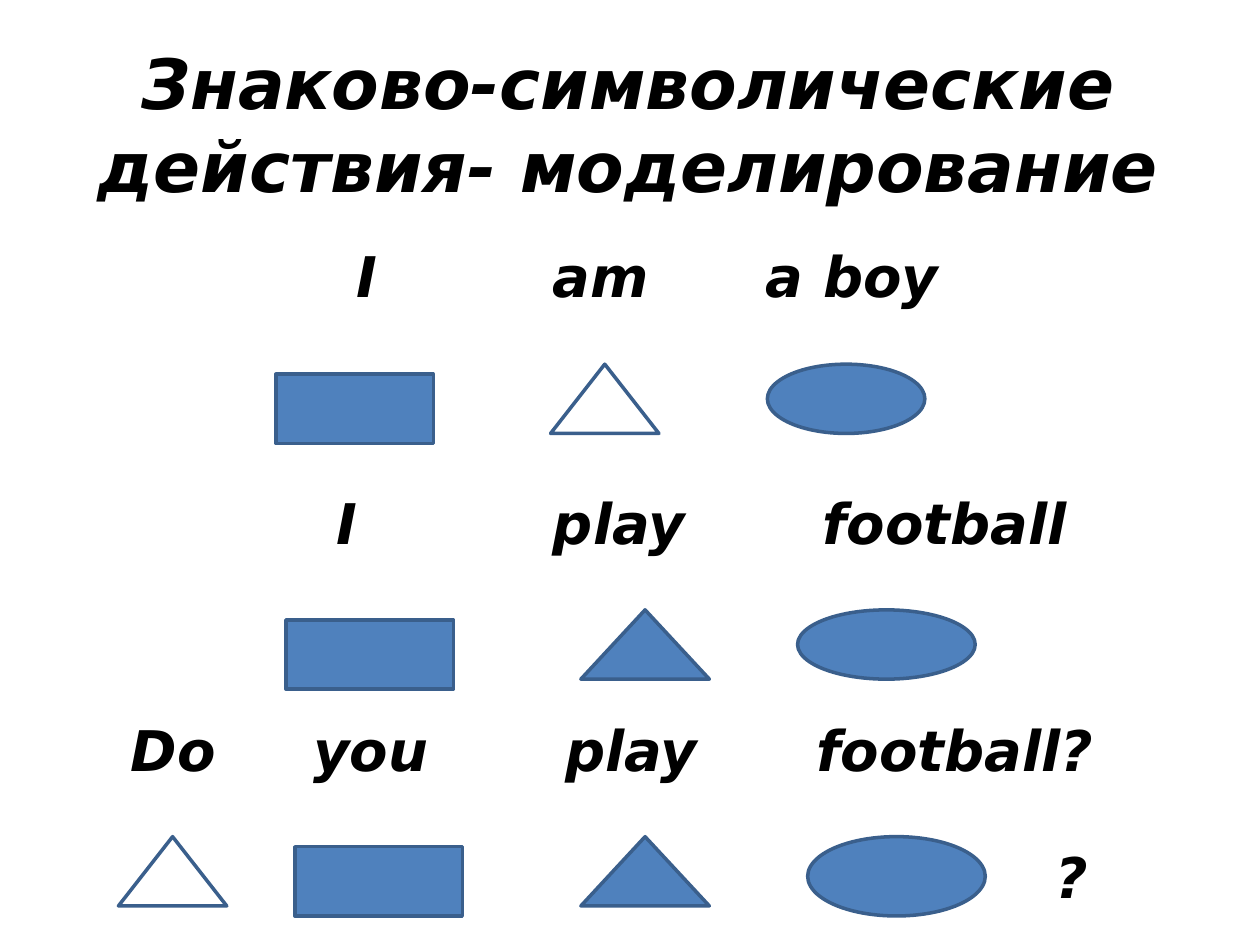
import pptx
import pptx.dml.color
import pptx.enum.shapes
import pptx.enum.text
import pptx.oxml.xmlchemy
import pptx.util
from lxml import etree
from pptx.oxml.ns import qn

BLACK = pptx.dml.color.RGBColor(0x00, 0x00, 0x00)
WHITE = pptx.dml.color.RGBColor(0xFF, 0xFF, 0xFF)
BLUE = pptx.dml.color.RGBColor(0x4F, 0x81, 0xBD)
OUTLINE = pptx.dml.color.RGBColor(0x3A, 0x5F, 0x8C)

FONT = "DejaVu Sans"
INSET = 0.1
WORD_HEIGHT = 0.64
SYMBOL_HEIGHT = 0.55
RECTANGLE_DROP = 0.08  # rectangles sit a little lower than their row

SHAPES = pptx.enum.shapes.MSO_SHAPE
RECTANGLE = SHAPES.RECTANGLE
TRIANGLE = SHAPES.ISOSCELES_TRIANGLE
ELLIPSE = SHAPES.OVAL

# Each sentence: text box (left, top, width), words with their left edges,
# top of the symbol row, symbols as (kind, left, width, height, fill)
SENTENCES = [
    ((2.27, 1.87, 7.5),
     [("I", 2.83), ("am", 4.39), ("a boy", 6.08)],
     2.89,
     [(RECTANGLE, 2.19, 1.25, SYMBOL_HEIGHT, BLUE),
      (TRIANGLE, 4.37, 0.86, SYMBOL_HEIGHT, WHITE),
      (ELLIPSE, 6.09, 1.25, SYMBOL_HEIGHT, BLUE)]),
    ((2.11, 3.83, 7.89),
     [("I", 2.67), ("play", 4.39), ("football", 6.53)],
     4.84,
     [(RECTANGLE, 2.27, 1.33, SYMBOL_HEIGHT, BLUE),
      (TRIANGLE, 4.61, 1.02, SYMBOL_HEIGHT, BLUE),
      (ELLIPSE, 6.33, 1.41, SYMBOL_HEIGHT, BLUE)]),
    ((0.94, 5.63, 8.67),
     [("Do", 1.04), ("you", 2.49), ("play", 4.49), ("football?", 6.48)],
     6.64,
     [(TRIANGLE, 0.94, 0.86, SYMBOL_HEIGHT, WHITE),
      (RECTANGLE, 2.34, 1.33, SYMBOL_HEIGHT, BLUE),
      (TRIANGLE, 4.61, 1.02, SYMBOL_HEIGHT, BLUE),
      (ELLIPSE, 6.41, 1.41, 0.63, BLUE)]),
]


def inches(*lengths):
    return [pptx.util.Inches(length) for length in lengths]


def add_text(page, text, left, top, width, height=WORD_HEIGHT, *, size=32,
             align=pptx.enum.text.PP_ALIGN.LEFT,
             anchor=pptx.enum.text.MSO_ANCHOR.TOP):
    """Add a bold italic text box and return its paragraph."""
    box = page.shapes.add_textbox(*inches(left, top, width, height))
    frame = box.text_frame
    frame.word_wrap = True
    frame.vertical_anchor = anchor
    para = frame.paragraphs[0]
    para.alignment = align
    span = para.add_run()
    span.text = text
    span.font.name = FONT
    span.font.size = pptx.util.Pt(size)
    span.font.bold = span.font.italic = True
    span.font.color.rgb = BLACK
    return para


def add_words(page, words, left, top, width):
    """Add one line of words, each starting at its own tab stop."""
    start = left + INSET
    stops = [edge - start for _, edge in words if edge > start]
    text = "\t".join(word for word, _ in words)
    if len(stops) == len(words):
        text = "\t" + text
    para = add_text(page, text, left, top, width)
    tabs = etree.SubElement(para._p.get_or_add_pPr(), qn("a:tabLst"))
    for stop in stops:
        etree.SubElement(tabs, qn("a:tab"),
                         pos=str(pptx.util.Inches(stop)), algn="l")


def add_symbol(page, kind, left, top, width, height, fill):
    symbol = page.shapes.add_shape(kind, *inches(left, top, width, height))
    symbol.shadow.inherit = False
    symbol.fill.solid()
    symbol.fill.fore_color.rgb = fill
    symbol.line.color.rgb = OUTLINE
    symbol.line.width = pptx.util.Pt(2)


def main():
    deck = pptx.Presentation()
    deck.slide_width, deck.slide_height = inches(10, 7.5)
    page = deck.slides.add_slide(deck.slide_layouts[6])

    # Title
    add_text(page, "Знаково-символические действия- моделирование",
             0.33, 0.25, 9.31, 1.45, size=39.6,
             align=pptx.enum.text.PP_ALIGN.CENTER,
             anchor=pptx.enum.text.MSO_ANCHOR.MIDDLE)

    # Sentences with the symbols that model them
    for place, words, row_top, symbols in SENTENCES:
        add_words(page, words, *place)
        for kind, left, width, height, fill in symbols:
            top = row_top + (RECTANGLE_DROP if kind == RECTANGLE else 0)
            add_symbol(page, kind, left, top, width, height, fill)

    # Question mark closing the last model
    add_text(page, "?", 8.28, 6.64, 0.63)

    deck.save("out.pptx")


if __name__ == "__main__":
    main()
